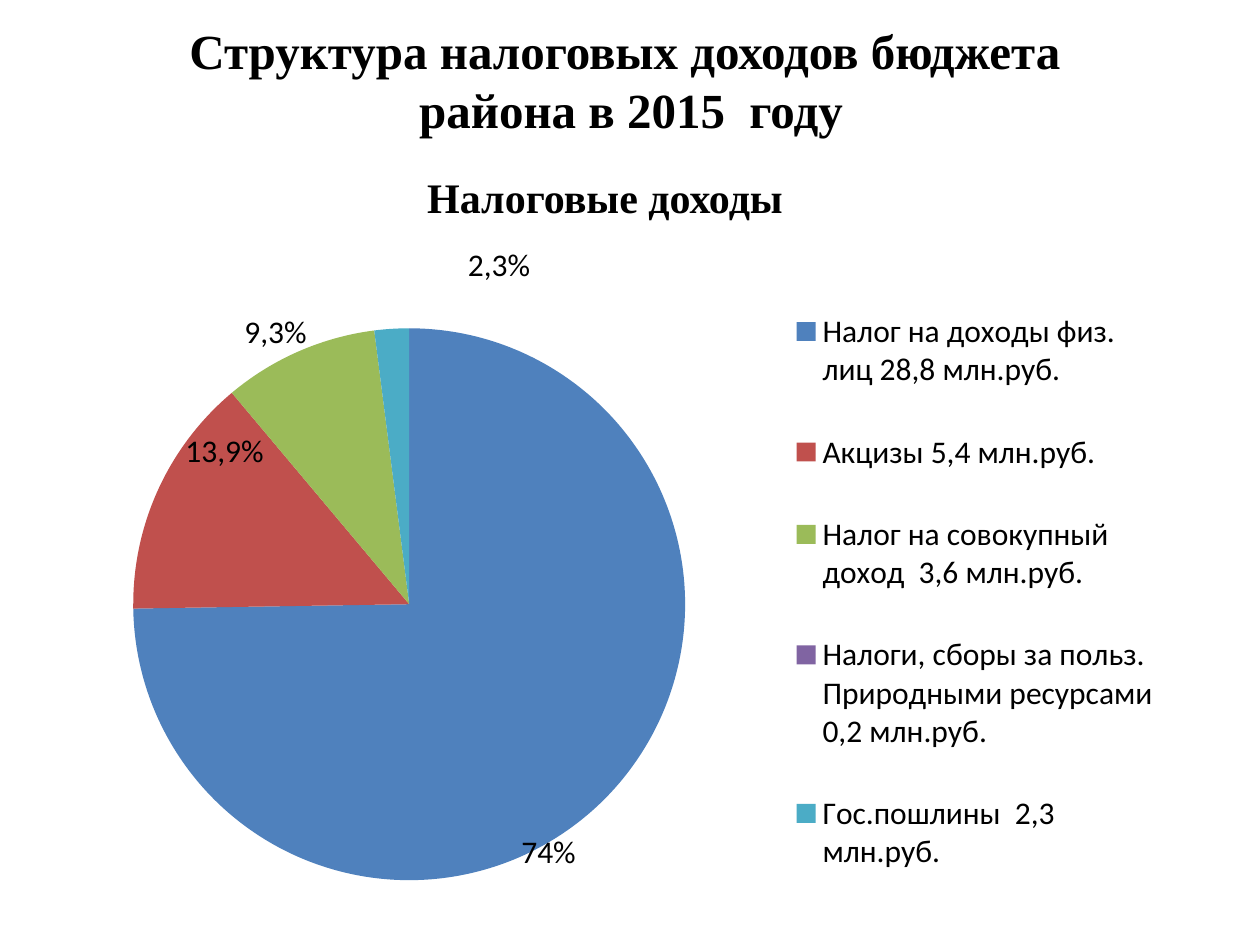
from lxml.etree import SubElement
from pptx import Presentation
from pptx.chart.data import CategoryChartData
from pptx.dml.color import RGBColor
from pptx.enum.chart import XL_CHART_TYPE, XL_LABEL_POSITION, XL_LEGEND_POSITION
from pptx.enum.text import MSO_ANCHOR, PP_ALIGN
from pptx.oxml.ns import qn
from pptx.util import Pt

COLORS = {
    "text": "000000",
    "income": "4F81BD",
    "excise": "C0504D",
    "aggregate": "9BBB59",
    "resources": "8064A2",
    "duty": "4BACC6",
}

TAXES = [
    ("Налог на доходы физ. лиц 28,8 млн.руб.", 74, "74%", "income", (-90, 30)),
    ("Акцизы 5,4 млн.руб.", 14, "13,9%", "excise", (112, -16)),
    ("Налог на совокупный доход  3,6 млн.руб.", 9, "9,3%", "aggregate", (11, 7)),
    ("Налоги, сборы за польз. Природными ресурсами   0,2 млн.руб.", 0, "0,5%",
     "resources", (9, -70)),
    ("Гос.пошлины  2,3 млн.руб.", 2, "2,3%", "duty", (108, -37)),
]


class SlideBuilder:
    scale = 914400 / 126
    heading_font = "Times New Roman"
    chart_font = "Calibri"

    def __init__(self, deck):
        self.page = deck.slides.add_slide(deck.slide_layouts[6])

    def emu(self, *lengths):
        return [round(length * self.scale) for length in lengths]

    def style(self, font, name, size, bold=False):
        font.name = name
        font.size = Pt(size)
        font.bold = bold
        font.color.rgb = RGBColor.from_string(COLORS["text"])

    def heading(self, lines, area, size, anchor):
        box = self.page.shapes.add_textbox(*self.emu(*area))
        frame = box.text_frame
        frame.word_wrap = True
        frame.vertical_anchor = anchor
        para = frame.paragraphs[0]
        para.alignment = PP_ALIGN.CENTER
        for index, line in enumerate(lines):
            if index:
                para.add_line_break()
            span = para.add_run()
            span.text = line
            self.style(span.font, self.heading_font, size, bold=True)

    def layout(self, parent, position, **values):
        for old in parent.findall(qn("c:layout")):
            parent.remove(old)
        layout = SubElement(parent, qn("c:layout"))
        parent.insert(position, layout)
        manual = SubElement(layout, qn("c:manualLayout"))
        for tag, value in values.items():
            SubElement(manual, qn(f"c:{tag}")).set("val", str(value))

    def pie(self, taxes, area):
        data = CategoryChartData()
        data.categories = [tax[0] for tax in taxes]
        data.add_series("Series 1", [tax[1] for tax in taxes])
        chart = self.page.shapes.add_chart(XL_CHART_TYPE.PIE, *self.emu(*area), data).chart
        chart.has_title = False
        self.style(chart.font, self.chart_font, 18)

        plot = chart.plots[0]
        plot.vary_by_categories = True
        self.layout(chart._chartSpace.chart.plotArea, 0, layoutTarget="inner",
                    xMode="edge", yMode="edge", x=0.017, y=0.18, w=0.572, h=0.734)

        chart.has_legend = True
        chart.legend.position = XL_LEGEND_POSITION.RIGHT
        chart.legend.include_in_layout = False
        self.style(chart.legend.font, self.chart_font, 18)
        self.layout(chart.legend._element, 1, xMode="edge", yMode="edge",
                    x=0.648, y=0.1, w=0.33, h=0.86)

        series = plot.series[0]
        for index, (_, _, caption, color, (shift_x, shift_y)) in enumerate(taxes):
            point = series.points[index]
            point.format.fill.solid()
            point.format.fill.fore_color.rgb = RGBColor.from_string(COLORS[color])
            label = point.data_label
            label.text_frame.word_wrap = False
            span = label.text_frame.paragraphs[0].add_run()
            span.text = caption
            self.style(span.font, self.chart_font, 18)
            label.position = XL_LABEL_POSITION.OUTSIDE_END
            element = series._element.dLbls.dLbl_lst[index]
            self.layout(element, 1, x=round(shift_x / area[2], 3),
                        y=round(shift_y / area[3], 3))
        for leader in series._element.dLbls.findall(qn("c:showLeaderLines")):
            leader.set("val", "0")


def main():
    deck = Presentation()
    deck.slide_width, deck.slide_height = (round(side * SlideBuilder.scale)
                                           for side in (1260, 945))
    slide = SlideBuilder(deck)
    slide.heading(["Структура налоговых доходов бюджета ", "района в 2015  году"],
                  (64, 0, 1134, 158), 28, MSO_ANCHOR.MIDDLE)
    slide.heading(["Налоговые доходы"], (332, 165, 546, 64), 24, MSO_ANCHOR.TOP)
    slide.pie(TAXES, (69, 193, 1123, 752))
    deck.save("out.pptx")


if __name__ == "__main__":
    main()
